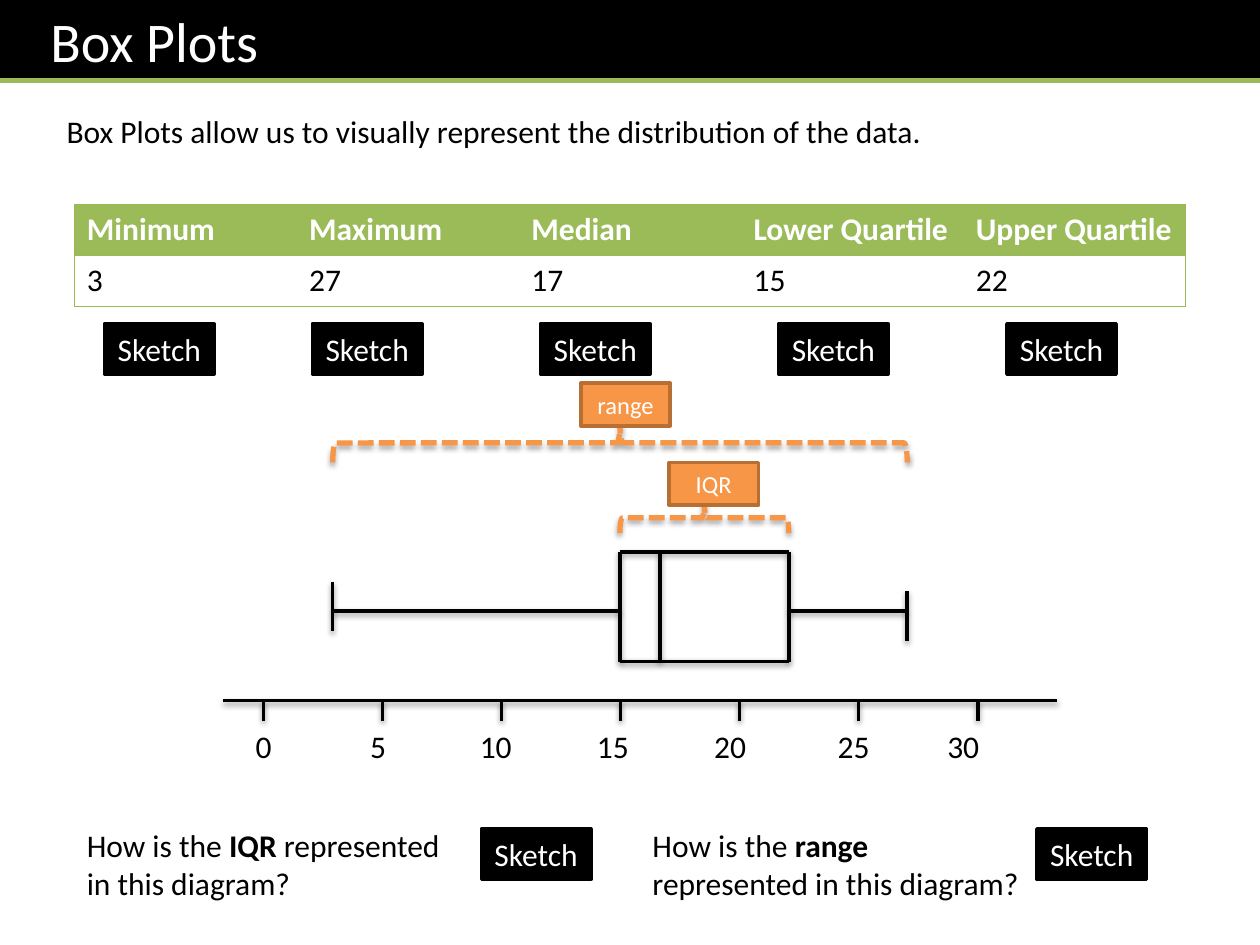
from lxml.etree import SubElement
from pptx import Presentation
from pptx.dml.color import RGBColor
from pptx.enum.dml import MSO_LINE
from pptx.enum.shapes import MSO_CONNECTOR, MSO_SHAPE
from pptx.enum.text import MSO_ANCHOR, PP_ALIGN
from pptx.oxml.ns import qn
from pptx.util import Inches, Pt

COLORS = {"black": "000000", "white": "FFFFFF", "green": "9BBB59", "border": "98B955",
          "orange": "F79646", "rust": "B76F34"}
FONT = "Calibri"
TITLE = "Box Plots"
INTRO = "Box Plots allow us to visually represent the distribution of the data."
SUMMARY = [("Minimum", "3"), ("Maximum", "27"), ("Median", "17"),
           ("Lower Quartile", "15"), ("Upper Quartile", "22")]
QUESTIONS = [(0.59, "IQR"), (5.08, "range")]
SKETCHES = [(0.83, 2.57), (2.48, 2.57), (4.29, 2.57), (6.18, 2.57), (7.99, 2.57),
            (3.82, 6.58), (8.23, 6.58)]
AXIS_LABELS = ["0", "5", "10", "15", "20", "25", "30"]
LABEL_STOPS = [0.91, 1.78, 2.71, 3.64, 4.62, 5.49]
AXIS_Y, TICK_START, TICK_GAP, TICK_LENGTH = 5.56, 2.09, 0.945, 0.16
LOW, Q1, MEDIAN, Q3, HIGH = 2.64, 4.92, 5.24, 6.26, 7.2
BOX_TOP, BOX_BOTTOM, WHISKER_Y = 4.38, 5.25, 4.85
PLOT_LINES = [
    (LOW, 4.62, LOW, 5.01), (HIGH, 4.69, HIGH, 5.09),
    *[(x, BOX_TOP, x, BOX_BOTTOM) for x in (MEDIAN, Q1, Q3)],
    *[(Q1, y, Q3, y) for y in (BOX_TOP, BOX_BOTTOM)],
    (LOW, WHISKER_Y, Q1, WHISKER_Y), (Q3, WHISKER_Y, HIGH, WHISKER_Y)]
BRACES = [("IQR", Q1, Q3, 3.99, 0.24, 5.31, 3.67), ("range", LOW, HIGH, 3.36, 0.31, 4.61, 3.04)]


def rgb(name):
    return RGBColor.from_string(COLORS[name])


def add_runs(para, runs, size=18, color="black"):
    for text, bold in runs:
        span = para.add_run()
        span.text = text
        span.font.name, span.font.size, span.font.bold = FONT, Pt(size), bold
        span.font.color.rgb = rgb(color)


def add_text(page, x, y, width, height, runs):
    box = page.shapes.add_textbox(Inches(x), Inches(y), Inches(width), Inches(height))
    box.text_frame.word_wrap = True
    para = box.text_frame.paragraphs[0]
    add_runs(para, runs)
    return para


def paint(shape, fill, line):
    shape.fill.solid()
    shape.fill.fore_color.rgb = rgb(fill)
    shape.line.color.rgb = rgb(line)
    shape.line.width = Pt(2)


def add_label(page, x, y, width, height, text, size, fill, line):
    box = page.shapes.add_shape(MSO_SHAPE.RECTANGLE, Inches(x), Inches(y), Inches(width), Inches(height))
    box.shadow.inherit = False
    paint(box, fill, line)
    frame = box.text_frame
    frame.word_wrap = False
    frame.vertical_anchor = MSO_ANCHOR.MIDDLE
    para = frame.paragraphs[0]
    para.alignment = PP_ALIGN.CENTER
    add_runs(para, [(text, False)], size, "white")


def add_shadow(effects, distance, opacity):
    shadow = SubElement(effects, qn("a:outerShdw"), blurRad="40000", dist=str(distance),
                        dir="5400000", rotWithShape="0")
    color = SubElement(shadow, qn("a:srgbClr"), val=COLORS["black"])
    SubElement(color, qn("a:alpha"), val=str(opacity * 1000))


def add_line(page, x1, y1, x2, y2, color="black", width=2, shadowed=True):
    line = page.shapes.add_connector(MSO_CONNECTOR.STRAIGHT, Inches(x1), Inches(y1), Inches(x2), Inches(y2))
    line.line.color.rgb = rgb(color)
    line.line.width = Pt(width)
    effects = SubElement(line._element.spPr, qn("a:effectLst"))
    if shadowed:
        add_shadow(effects, 20000, 38)


def add_brace(page, start, end, top, depth):
    span = end - start
    left, upper = (start + end - depth) / 2, top + (depth - span) / 2
    brace = page.shapes.add_shape(MSO_SHAPE.LEFT_BRACE, Inches(left), Inches(upper), Inches(depth), Inches(span))
    brace.rotation = 90
    brace.fill.background()
    brace.line.color.rgb = rgb("orange")
    brace.line.width = Pt(3)
    brace.line.dash_style = MSO_LINE.SQUARE_DOT
    brace.shadow.inherit = False
    add_shadow(brace._element.spPr.find(qn("a:effectLst")), 23000, 35)


def set_borders(cell, visible):
    properties = cell._tc.get_or_add_tcPr()
    for side in "LRTB":
        border = SubElement(properties, qn(f"a:ln{side}"), w=str(Pt(0.75)))
        if side in visible:
            fill = SubElement(border, qn("a:solidFill"))
            SubElement(fill, qn("a:srgbClr"), val=COLORS["border"])
        else:
            SubElement(border, qn("a:noFill"))


def add_summary(page):
    last = len(SUMMARY) - 1
    frame = page.shapes.add_table(2, len(SUMMARY), Inches(0.59), Inches(1.62), Inches(8.82), Inches(0.81))
    table = frame.table
    table.horz_banding = False
    for column, pair in enumerate(SUMMARY):
        for row, text in enumerate(pair):
            cell = table.cell(row, column)
            sides = "TB" + ("L" if column == 0 else "") + ("R" if column == last else "")
            set_borders(cell, sides)
            cell.fill.solid()
            cell.fill.fore_color.rgb = rgb("white" if row else "green")
            add_runs(cell.text_frame.paragraphs[0], [(text, row == 0)], 18, "black" if row else "white")


def add_title(page):
    title = page.shapes.title
    title.left, title.top, title.width, title.height = Inches(0), Inches(0), Inches(10), Inches(0.64)
    paint(title, "black", "black")
    frame = title.text_frame
    frame.margin_left = Inches(0.4)
    frame.vertical_anchor = MSO_ANCHOR.MIDDLE
    frame.paragraphs[0].alignment = PP_ALIGN.LEFT
    add_runs(frame.paragraphs[0], [(TITLE, False)], 32, "white")


def add_axis(page):
    add_line(page, 1.77, AXIS_Y, 8.39, AXIS_Y)
    for index in range(len(AXIS_LABELS)):
        x = TICK_START + index * TICK_GAP
        add_line(page, x, AXIS_Y + TICK_LENGTH, x, AXIS_Y)
    para = add_text(page, 1.93, 5.72, 6.3, 0.4, [("\t".join(AXIS_LABELS), False)])
    stops = SubElement(para._p.get_or_add_pPr(), qn("a:tabLst"))
    for stop in LABEL_STOPS:
        SubElement(stops, qn("a:tab"), pos=str(Inches(stop)), algn="l")


def main():
    """Build the box plot slide."""
    deck = Presentation()
    deck.slide_width, deck.slide_height = Inches(10), Inches(7.5)
    page = deck.slides.add_slide(deck.slide_layouts[5])
    add_title(page)
    add_line(page, 0, 0.64, 10, 0.64, "green", 3, False)
    add_text(page, 0.43, 0.84, 7.72, 0.4, [(INTRO, False)])
    add_summary(page)
    add_axis(page)
    for ends in PLOT_LINES:
        add_line(page, *ends)
    for x, y in SKETCHES:
        add_label(page, x, y, 0.87, 0.4, "Sketch", 18, "black", "black")
    for x, term in QUESTIONS:
        runs = [("How is the ", False), (term, True), (" represented in this diagram?", False)]
        add_text(page, x, 6.51, 3.15, 0.71, runs)
    for name, start, end, top, depth, x, y in BRACES:
        add_brace(page, start, end, top, depth)
        add_label(page, x, y, 0.71, 0.34, name, 14, "orange", "rust")
    deck.save("out.pptx")


if __name__ == "__main__":
    main()
